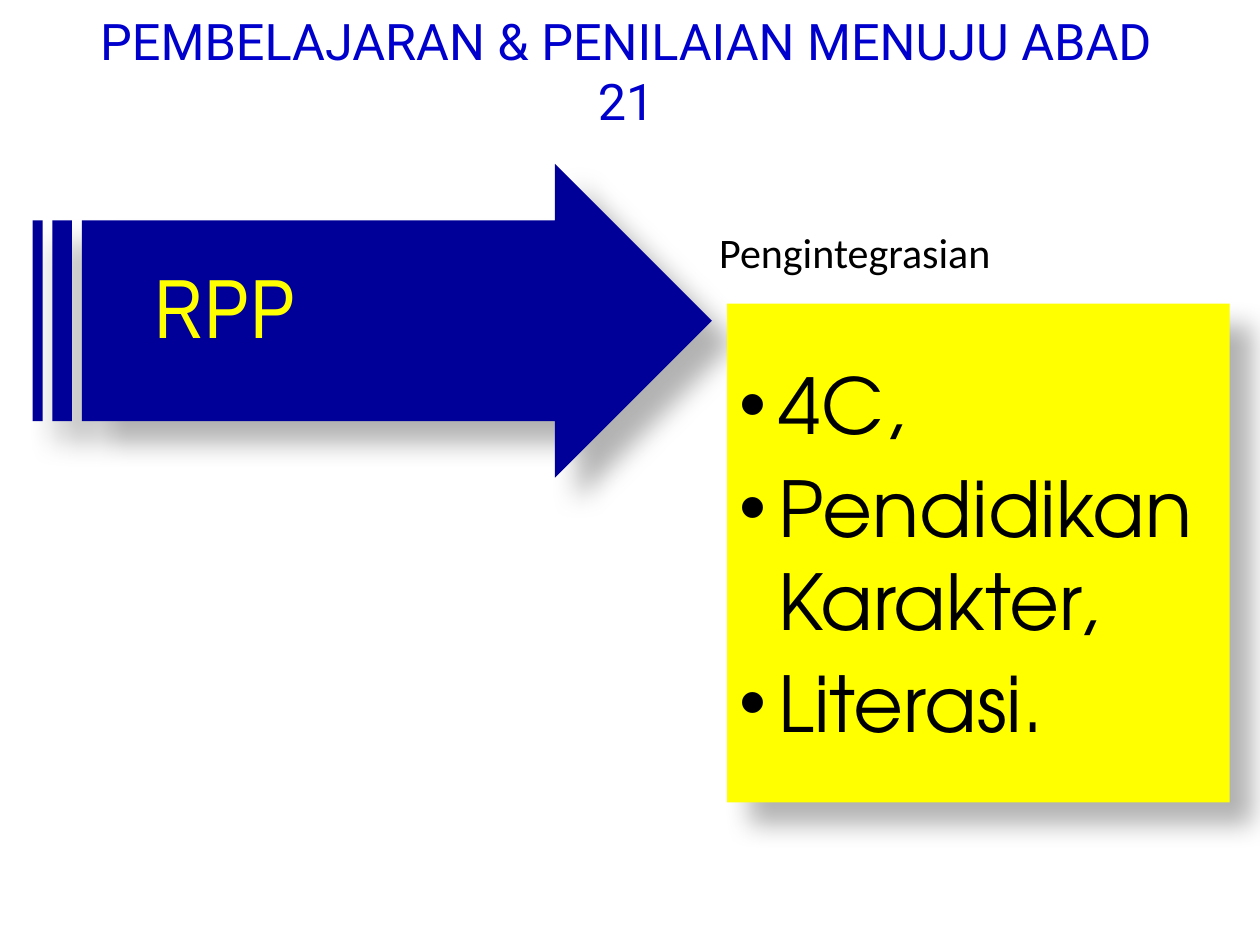
from dataclasses import dataclass

from lxml import etree
from pptx import Presentation
from pptx.dml.color import RGBColor
from pptx.enum.shapes import MSO_SHAPE
from pptx.enum.text import MSO_ANCHOR, MSO_AUTO_SIZE, PP_ALIGN
from pptx.oxml.ns import qn
from pptx.util import Inches, Pt

ARROW, RECTANGLE = MSO_SHAPE.STRIPED_RIGHT_ARROW, MSO_SHAPE.RECTANGLE
LEFT, CENTER = PP_ALIGN.LEFT, PP_ALIGN.CENTER
TOP, MIDDLE = MSO_ANCHOR.TOP, MSO_ANCHOR.MIDDLE
GROW, FIXED = MSO_AUTO_SIZE.SHAPE_TO_FIT_TEXT, MSO_AUTO_SIZE.NONE

SLIDE_WIDTH, SLIDE_HEIGHT = Inches(10), Inches(7.5)
COLUMNS, ROWS = 100, 75
NAVY, BLUE, YELLOW, BLACK = "000099", "0000CC", "FFFF00", "000000"


@dataclass
class Box:
    """A rectangle in grid columns and rows."""
    left: float
    top: float
    width: float
    height: float

    def inner(self, left, top, width, height):
        """A box whose corner is counted from this box's corner."""
        return Box(self.left + left, self.top + top, width, height)

    def place(self):
        column, row = SLIDE_WIDTH / COLUMNS, SLIDE_HEIGHT / ROWS
        return [round(length) for length in (
            self.left * column, self.top * row,
            self.width * column, self.height * row)]


def color(hex_string):
    return RGBColor.from_string(hex_string)


def add_soft_shadow(shape, blur=15, distance=18, angle=45, opacity=30):
    effects = etree.SubElement(shape._element.spPr, qn("a:effectLst"))
    shadow = etree.SubElement(
        effects, qn("a:outerShdw"), blurRad=str(Pt(blur)),
        dist=str(Pt(distance)), dir=str(angle * 60000),
        algn="tl", rotWithShape="0")
    tint = etree.SubElement(shadow, qn("a:srgbClr"), val=BLACK)
    etree.SubElement(tint, qn("a:alpha"), val=str(opacity * 1000))


def add_filled_shape(shapes, kind, box, fill):
    shape = shapes.add_shape(kind, *box.place())
    shape.fill.solid()
    shape.fill.fore_color.rgb = color(fill)
    shape.line.fill.background()
    add_soft_shadow(shape)
    return shape


def write_text(shape, *lines, font, size, fill, align=LEFT, anchor=TOP,
               auto_size=FIXED, indent=0, space_before=0, bullet=None):
    frame = shape.text_frame
    frame.word_wrap = True
    frame.auto_size = auto_size
    frame.vertical_anchor = anchor
    for index, line in enumerate(lines):
        paragraph = frame.add_paragraph() if index else frame.paragraphs[0]
        paragraph.alignment = align
        paragraph.space_before = Pt(space_before)
        run = paragraph.add_run()
        run.text = line
        run.font.name = font
        run.font.size = Pt(size)
        run.font.color.rgb = color(fill)
        properties = paragraph._p.get_or_add_pPr()
        if indent:
            properties.set("marL", str(Inches(indent)))
            properties.set("indent", str(-Inches(indent)))
        if bullet:
            etree.SubElement(properties, qn("a:buFont"), typeface="Arial")
            etree.SubElement(properties, qn("a:buChar"), char=bullet)


def add_title(slide, box):
    title = slide.shapes.add_textbox(*box.place())
    write_text(title, "PEMBELAJARAN & PENILAIAN MENUJU ABAD 21",
               font="Roboto", size=28.8, fill=BLUE, align=CENTER)


def add_plan_arrow(slide, box):
    shapes = slide.shapes.add_group_shape().shapes
    arrow = add_filled_shape(shapes, ARROW, box, NAVY)
    arrow.adjustments[0] = 0.64
    arrow.adjustments[1] = 0.5
    label = shapes.add_textbox(*box.inner(8.7, 6.7, 35.8, 3.9).place())
    write_text(label, "RPP", font="Arial Narrow", size=48, fill=YELLOW,
               auto_size=GROW, indent=0.13)


def add_integration_panel(slide, box):
    shapes = slide.shapes.add_group_shape().shapes
    panel = add_filled_shape(
        shapes, RECTANGLE, box.inner(1.6, 6.6, 39.9, 39.6), YELLOW)
    write_text(panel, "4C,", "Pendidikan Karakter,", "Literasi.",
               font="TeX Gyre Adventor", size=44, fill=BLACK, anchor=MIDDLE,
               indent=0.31, space_before=6, bullet="•")
    heading = shapes.add_textbox(*box.inner(0, 0, 38.6, 5).place())
    write_text(heading, "Pengintegrasian", font="Calibri", size=24,
               fill=BLACK, auto_size=GROW)


def main():
    presentation = Presentation()
    presentation.slide_width = SLIDE_WIDTH
    presentation.slide_height = SLIDE_HEIGHT
    slide = presentation.slides.add_slide(presentation.slide_layouts[6])
    add_plan_arrow(slide, Box(2.6, 13, 53.9, 24.9))
    add_integration_panel(slide, Box(56.1, 17.5, 41.5, 46.2))
    add_title(slide, Box(4.7, 0.3, 90, 7.7))
    presentation.save("out.pptx")


if __name__ == "__main__":
    main()
